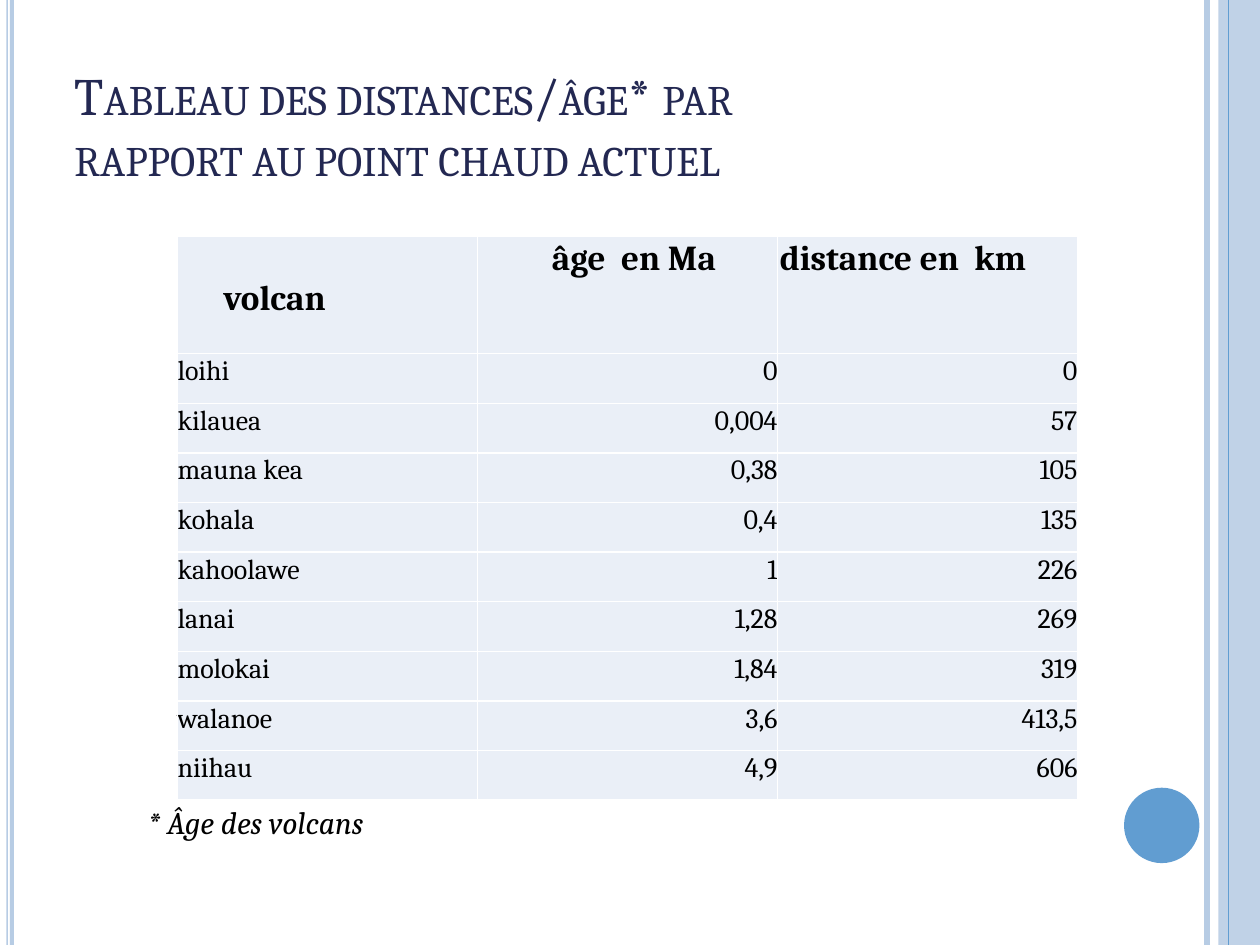
import pptx
import pptx.dml.color
import pptx.enum.shapes
import pptx.enum.text
import pptx.oxml
import pptx.util
from lxml import etree

Cm, Pt = pptx.util.Cm, pptx.util.Pt
RGB = pptx.dml.color.RGBColor
ALIGN = pptx.enum.text.PP_ALIGN
SHAPE = pptx.enum.shapes.MSO_SHAPE

PALE_BLUE = RGB(0xB7, 0xCC, 0xE4)
BLUE = RGB(0x61, 0x9D, 0xD1)
NAVY = RGB(0x23, 0x28, 0x52)
BLACK = RGB(0, 0, 0)
WHITE = RGB(0xFF, 0xFF, 0xFF)
CELL_BLUE = RGB(0xEA, 0xEF, 0xF7)
FONT = "Cambria"
A = "http://schemas.openxmlformats.org/drawingml/2006/main"

HEADINGS = ["volcan", "âge  en Ma", "distance en  km"]
VOLCANOES = [
    ("loihi", "0", "0"),
    ("kilauea", "0,004", "57"),
    ("mauna kea", "0,38", "105"),
    ("kohala", "0,4", "135"),
    ("kahoolawe", "1", "226"),
    ("lanai", "1,28", "269"),
    ("molokai", "1,84", "319"),
    ("walanoe", "3,6", "413,5"),
    ("niihau", "4,9", "606"),
]


def add_run(p, text, size, color=BLACK, bold=False, italic=False):
    r = p.add_run()
    r.text = text
    f = r.font
    f.name, f.size, f.bold, f.italic = FONT, Pt(size), bold, italic
    f.color.rgb = color


def set_margins(box, left=0, top=0):
    box.margin_left, box.margin_top = Cm(left), Cm(top)
    box.margin_right = box.margin_bottom = 0


def add_filled(s, kind, x, y, w, h, color):
    sp = s.shapes.add_shape(kind, Cm(x), Cm(y), Cm(w), Cm(h))
    sp.shadow.inherit = False
    sp.fill.solid()
    sp.fill.fore_color.rgb = color
    sp.line.fill.background()
    return sp


def add_vertical_line(s, x, h, color, width):
    line = s.shapes.add_connector(
        pptx.enum.shapes.MSO_CONNECTOR.STRAIGHT, Cm(x), 0, Cm(x), Cm(h))
    line.line.color.rgb = color
    line.line.width = Pt(width)
    etree.SubElement(line._element.spPr, f"{{{A}}}effectLst")


def add_side_decor(s, w, h):
    """Draw the stripes along both edges and the disc at lower right."""
    add_vertical_line(s, w - 1.07, h, PALE_BLUE, 3)
    add_filled(s, SHAPE.OVAL, w - 2.74, h - 3.17, 1.52, 1.52, BLUE)
    for x, stripe_w in ((0.13, 0.03), (0.2, 0.08)):
        add_filled(s, SHAPE.RECTANGLE, x, 0, stripe_w, h, PALE_BLUE)
    band = add_filled(s, SHAPE.RECTANGLE, w - 0.84, 0, 0.84, h, PALE_BLUE)
    color = band._element.spPr.find(f".//{{{A}}}srgbClr")
    etree.SubElement(color, f"{{{A}}}alpha", val="87000")
    add_vertical_line(s, w - 0.63, h, BLUE, 0.75)


def fill_title(s, x, y, w, h):
    sp = s.shapes.title
    sp.left, sp.top, sp.width, sp.height = Cm(x), Cm(y), Cm(w), Cm(h)
    tf = sp.text_frame
    tf.word_wrap = True
    tf.auto_size = pptx.enum.text.MSO_AUTO_SIZE.NONE
    tf.vertical_anchor = pptx.enum.text.MSO_ANCHOR.TOP
    set_margins(tf, top=0.08)
    p = tf.paragraphs[0]
    p.alignment = ALIGN.LEFT
    p.line_spacing = 1.17
    p.space_before = Pt(2.5)
    for text, size in (("T", 30), ("ABLEAU DES DISTANCES", 24), ("/", 30),
                       ("ÂGE", 24), ("* ", 30),
                       ("PAR RAPPORT AU POINT CHAUD ACTUEL", 24)):
        add_run(p, text, size, NAVY)


def set_borders(cell):
    tc_pr = cell._tc.get_or_add_tcPr()
    for i, side in enumerate(("lnL", "lnR", "lnT", "lnB")):
        tc_pr.insert(i, pptx.oxml.parse_xml(
            f'<a:{side} xmlns:a="{A}" w="12700"><a:solidFill>'
            f'<a:srgbClr val="{WHITE}"/></a:solidFill></a:{side}>'))


def fill_cell(cell, text, size, spacing, align=ALIGN.LEFT, left=0.0, top=0.03,
              bold=False):
    cell.fill.solid()
    cell.fill.fore_color.rgb = CELL_BLUE
    set_borders(cell)
    set_margins(cell, left, top)
    p = cell.text_frame.paragraphs[0]
    p.alignment = align
    p.line_spacing = Pt(spacing)
    p.space_before = Pt(0.9)
    add_run(p, text, size, bold=bold)


def add_volcano_table(s, x, y, w, header_h, row_h):
    n = len(VOLCANOES)
    table = s.shapes.add_table(n + 1, len(HEADINGS), Cm(x), Cm(y), Cm(w),
                               Cm(header_h + n * row_h)).table
    table.horz_banding = False
    for col in table.columns:
        col.width = Cm(w / len(HEADINGS))
    for i, row in enumerate(table.rows):
        row.height = Cm(row_h if i else header_h)

    offsets = [(0.93, 0.84), (1.5, 0.03), (0.05, 0.03)]
    for c, (text, (left, top)) in enumerate(zip(HEADINGS, offsets)):
        fill_cell(table.cell(0, c), text, 20, 23.5, left=left, top=top,
                  bold=True)
    for i, values in enumerate(VOLCANOES, 1):
        for c, text in enumerate(values):
            fill_cell(table.cell(i, c), text, 16, 18.6,
                      ALIGN.RIGHT if c else ALIGN.LEFT)


def add_footnote(s, x, y, w, h):
    tf = s.shapes.add_textbox(Cm(x), Cm(y), Cm(w), Cm(h)).text_frame
    tf.word_wrap = True
    set_margins(tf, 0.03, 0.03)
    p = tf.paragraphs[0]
    p.space_before = Pt(1)
    add_run(p, "* Âge des volcans", 18, italic=True)


def main():
    prs = pptx.Presentation()
    w, h = 25.4, 19.05
    prs.slide_width, prs.slide_height = Cm(w), Cm(h)
    s = prs.slides.add_slide(prs.slide_layouts[5])
    add_side_decor(s, w, h)
    fill_title(s, 1.5, 0.97, 16.81, 2.84)
    add_volcano_table(s, 3.58, 4.77, 18.14, 2.36, 1)
    add_footnote(s, 2.95, 16.15, 5.1, 0.84)
    prs.save("out.pptx")


if __name__ == "__main__":
    main()
